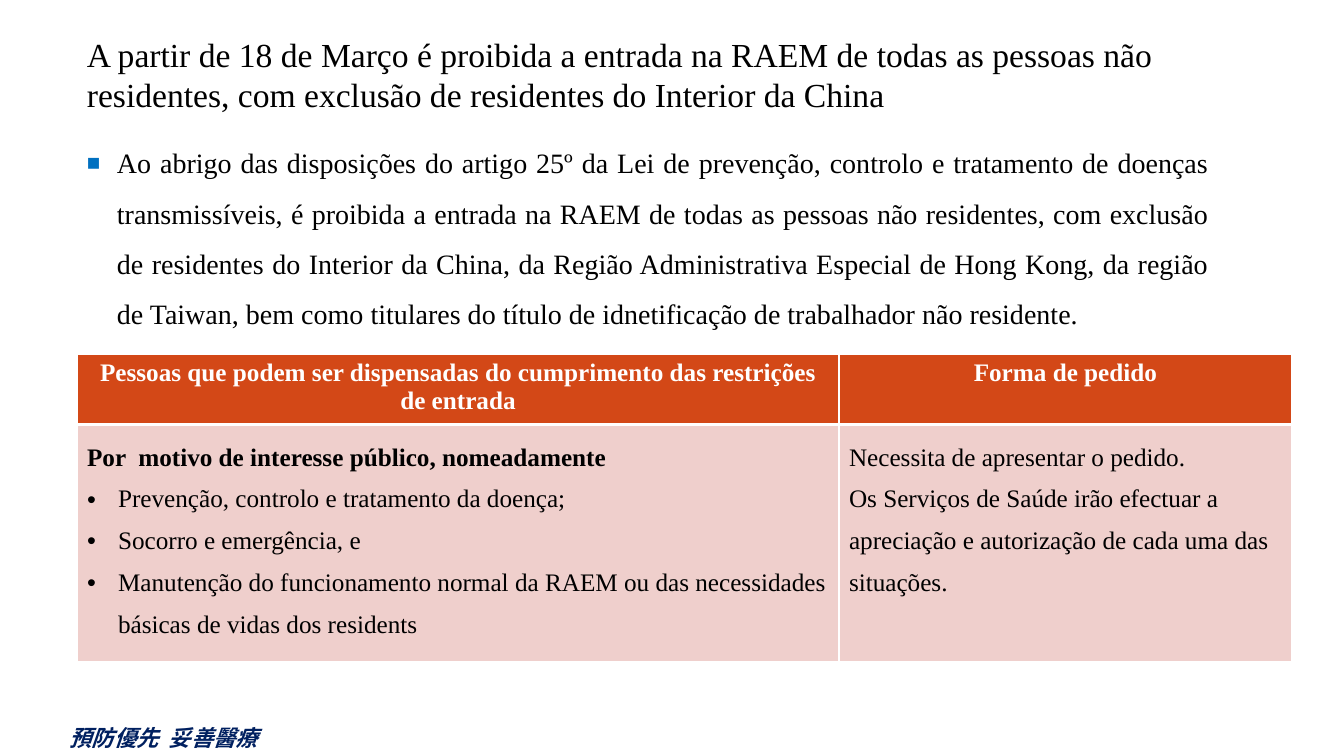
from pptx import Presentation
from pptx.dml.color import RGBColor
from pptx.enum.text import MSO_ANCHOR, MSO_AUTO_SIZE, PP_ALIGN
from pptx.oxml.ns import qn
from pptx.util import Emu, Pt
from lxml.etree import SubElement

# Content
TITLE = ("A partir de 18 de Março é proibida a entrada na RAEM de todas as pessoas não "
         "residentes, com exclusão de residentes do Interior da China")
BODY = ("Ao abrigo das disposições do artigo 25º da Lei de prevenção, controlo e tratamento "
        "de doenças transmissíveis, é proibida a entrada na RAEM de todas as pessoas não "
        "residentes, com exclusão de residentes do Interior da China, da Região "
        "Administrativa Especial de Hong Kong, da região de Taiwan, bem como titulares do "
        "título de idnetificação de trabalhador não residente.")
MOTTO = "預防優先  妥善醫療"
HEADERS = ["Pessoas que podem ser dispensadas do cumprimento das restrições de entrada",
           "Forma de pedido"]
# Each cell: (text, style) per paragraph
CELLS = [
    [("Por  motivo de interesse público, nomeadamente", "bold"),
     ("Prevenção, controlo e tratamento da doença;", "bullet"),
     ("Socorro e emergência, e", "bullet"),
     ("Manutenção do funcionamento normal da RAEM ou das necessidades básicas de vidas "
      "dos residents", "bullet")],
    [("Necessita de apresentar o pedido.", "plain"),
     ("Os Serviços de Saúde irão efectuar a apreciação e autorização de cada uma das "
      "situações.", "plain")],
]

# Style
SERIF, CJK = "Times New Roman", "Noto Sans CJK SC"
BLACK, WHITE, NAVY, BLUE = "000000", "FFFFFF", "002060", "0070C0"
ORANGE, PINK = "D34817", "EFCFCC"
COL_W, ROW_H = (762, 453), (65, 219)
LEFT = 77


def px(n):
    return Emu(round(n * 914400 / 100.8))


def rgb(h):
    return RGBColor.from_string(h)


def add_run(p, text, size, color=BLACK, font=SERIF, bold=False, italic=False):
    r = p.add_run()
    r.text = text
    f = r.font
    f.size, f.name, f.bold, f.italic = Pt(size), font, bold, italic
    f.color.rgb = rgb(color)
    SubElement(r._r.get_or_add_rPr(), qn("a:ea"), typeface=font)


def add_bullet(p, char, indent, color=None, percent=100):
    pPr = p._p.get_or_add_pPr()
    pPr.set("marL", str(px(indent)))
    pPr.set("indent", str(-px(indent)))
    if color:
        SubElement(SubElement(pPr, qn("a:buClr")), qn("a:srgbClr"), val=color)
    SubElement(pPr, qn("a:buSzPct"), val=str(percent * 1000))
    SubElement(pPr, qn("a:buFont"), typeface="Arial")
    SubElement(pPr, qn("a:buChar"), char=char)


def add_box(x, y, w, h):
    tf = s.shapes.add_textbox(px(x), px(y), px(w), px(h)).text_frame
    tf.word_wrap = True
    return tf


def style_cell(cell, fill, bottom):
    tcPr = cell._tc.get_or_add_tcPr()
    for side, width in (("L", 1), ("R", 1), ("T", 1), ("B", bottom)):
        ln = SubElement(tcPr, qn("a:ln" + side), w=str(Pt(width)))
        SubElement(SubElement(ln, qn("a:solidFill")), qn("a:srgbClr"), val=WHITE)
    cell.fill.solid()
    cell.fill.fore_color.rgb = rgb(fill)


prs = Presentation()
prs.slide_width, prs.slide_height = px(1344), px(756)
s = prs.slides.add_slide(prs.slide_layouts[6])

# Footer motto
tf = add_box(0, 719, 328, 37)
tf.auto_size = MSO_AUTO_SIZE.SHAPE_TO_FIT_TEXT
p = tf.paragraphs[0]
p.alignment = PP_ALIGN.CENTER
add_run(p, MOTTO, 16, NAVY, CJK, bold=True, italic=True)

# Title
tf = add_box(LEFT, 29, 1119, 95)
tf.vertical_anchor = MSO_ANCHOR.MIDDLE
tf.margin_bottom = px(10)
add_run(tf.paragraphs[0], TITLE, 24)

# Body paragraph
p = add_box(LEFT, 124, 1142, 504).paragraphs[0]
p.alignment = PP_ALIGN.JUSTIFY
p.line_spacing = 1.5
add_bullet(p, "■", 30, BLUE, 80)
add_run(p, BODY, 20)

# Table
table = s.shapes.add_table(2, 2, px(LEFT), px(354), px(sum(COL_W)), px(sum(ROW_H))).table
for row, h in zip(table.rows, ROW_H):
    row.height = px(h)
for i, (w, header, lines) in enumerate(zip(COL_W, HEADERS, CELLS)):
    table.columns[i].width = px(w)
    head, cell = table.cell(0, i), table.cell(1, i)
    style_cell(head, ORANGE, 3)
    style_cell(cell, PINK, 1)
    p = head.text_frame.paragraphs[0]
    p.alignment = PP_ALIGN.CENTER
    add_run(p, header, 18, WHITE, bold=True)
    tf = cell.text_frame
    for n, (text, style) in enumerate(lines):
        p = tf.add_paragraph() if n else tf.paragraphs[0]
        p.line_spacing = 1.5
        if style == "bullet":
            add_bullet(p, "•", 31)
        add_run(p, text, 18, bold=style == "bold")

prs.save("out.pptx")
